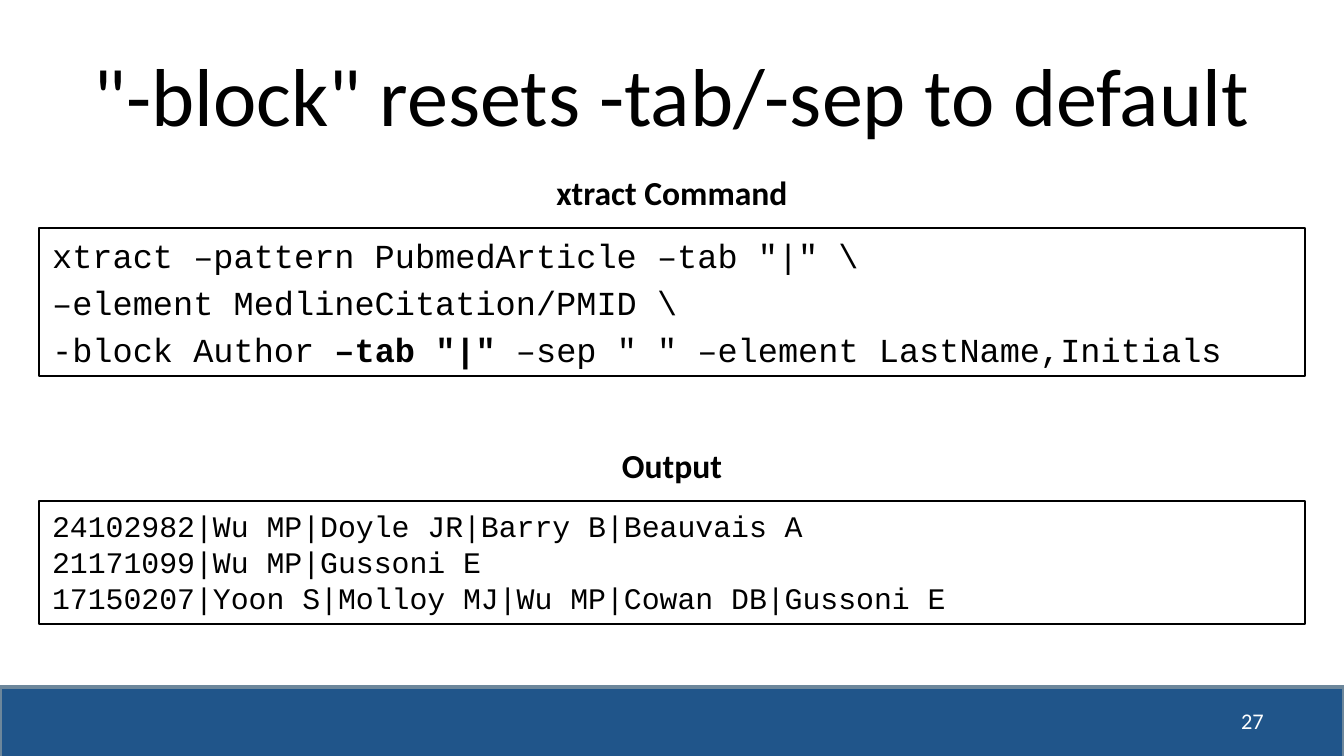
from dataclasses import dataclass

from pptx import Presentation
from pptx.dml.color import RGBColor
from pptx.enum.shapes import MSO_SHAPE as Preset
from pptx.enum.text import MSO_ANCHOR as Anchor, PP_ALIGN as Align
from pptx.util import Emu, Pt

EMU_PER_PX = 914400 / 134.4
WIDTH, HEIGHT = 1344, 756


def px(length):
    return Emu(round(length * EMU_PER_PX))


@dataclass(frozen=True)
class Theme:
    ink: RGBColor = RGBColor(0x00, 0x00, 0x00)
    paper: RGBColor = RGBColor(0xFF, 0xFF, 0xFF)
    footer: RGBColor = RGBColor(0x20, 0x55, 0x8A)
    footer_edge: RGBColor = RGBColor(0x6D, 0x87, 0x9B)
    sans: str = "Calibri"
    mono: str = "Courier New"
    title: int = 44
    heading: int = 18
    command: int = 18
    output: int = 16
    page_number: int = 12


class SlideBuilder:
    def __init__(self, slide, theme):
        self.slide = slide
        self.theme = theme

    def add_lines(self, frame, lines, size, font, color, align=Align.LEFT,
                  anchor=Anchor.TOP, gap=0):
        """Fill a frame; each line is a list of (text, bold) runs."""
        frame.word_wrap = True
        frame.vertical_anchor = anchor
        for index, line in enumerate(lines):
            paragraph = frame.paragraphs[0] if index == 0 else frame.add_paragraph()
            paragraph.alignment = align
            if index and gap:
                paragraph.space_before = Pt(gap)
            for text, bold in line:
                run = paragraph.add_run()
                run.text = text
                run.font.name = font
                run.font.size = Pt(size)
                run.font.bold = bold
                run.font.color.rgb = color

    def rectangle(self, left, top, width, height, fill, edge, edge_width):
        box = self.slide.shapes.add_shape(
            Preset.RECTANGLE, px(left), px(top), px(width), px(height))
        box.shadow.inherit = False
        box.fill.solid()
        box.fill.fore_color.rgb = fill
        box.line.color.rgb = edge
        box.line.width = Pt(edge_width)
        return box

    def label(self, left, top, width, height, text, size, color=None,
              bold=False, align=Align.CENTER, anchor=Anchor.MIDDLE):
        box = self.slide.shapes.add_textbox(
            px(left), px(top), px(width), px(height))
        self.add_lines(box.text_frame, [[(text, bold)]], size, self.theme.sans,
                       color or self.theme.ink, align, anchor)

    def listing(self, heading, top, height, lines, size, gap=0):
        """Framed monospaced text under a centred bold heading."""
        theme = self.theme
        box = self.rectangle(39, top, WIDTH - 2 * 39, height,
                             theme.paper, theme.ink, 0.75)
        self.add_lines(box.text_frame, lines, size, theme.mono, theme.ink,
                       gap=gap)
        heading_width = 282
        self.label((WIDTH - heading_width) // 2, top - 63, heading_width, 54,
                   heading, theme.heading, bold=True, anchor=Anchor.TOP)


def main():
    theme = Theme()
    deck = Presentation()
    deck.slide_width, deck.slide_height = px(WIDTH), px(HEIGHT)
    builder = SlideBuilder(deck.slides.add_slide(deck.slide_layouts[6]), theme)

    builder.rectangle(0, 687, WIDTH, 78, theme.footer, theme.footer_edge, 2)
    builder.label(67, 31, 1210, 126, '"-block" resets -tab/-sep to default',
                  theme.title)
    builder.label(964, 700, 313, 41, "27", theme.page_number, theme.paper,
                  align=Align.RIGHT)

    command = [
        [('xtract –pattern PubmedArticle –tab "|" \\', False)],
        [("–element MedlineCitation/PMID \\", False)],
        [("-block Author ", False), ('–tab "|" ', True),
         ('–sep " " –element LastName,Initials', False)],
    ]
    builder.listing("xtract Command", 228, 148, command, theme.command,
                    gap=0.2 * theme.command)

    output = [
        "24102982|Wu MP|Doyle JR|Barry B|Beauvais A",
        "21171099|Wu MP|Gussoni E",
        "17150207|Yoon S|Molloy MJ|Wu MP|Cowan DB|Gussoni E",
    ]
    builder.listing("Output", 501, 123, [[(row, False)] for row in output],
                    theme.output)

    deck.save("out.pptx")


if __name__ == "__main__":
    main()
